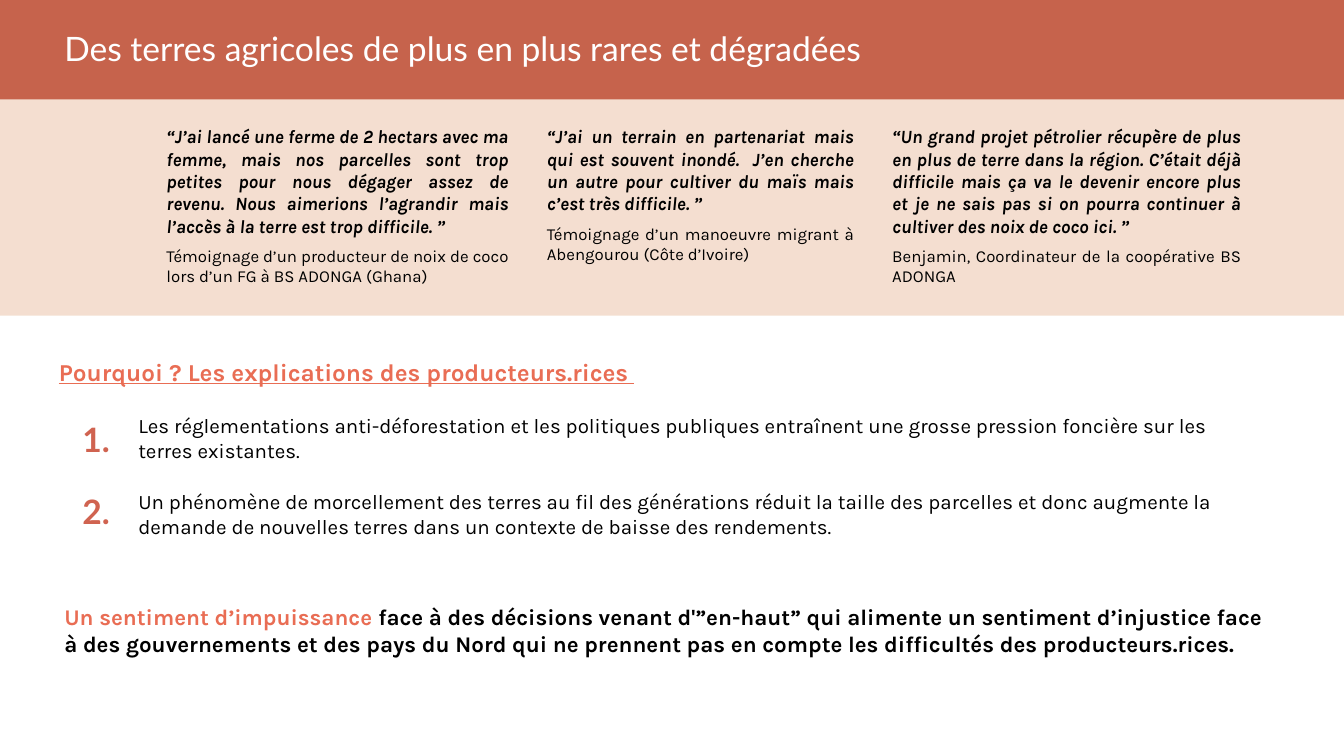
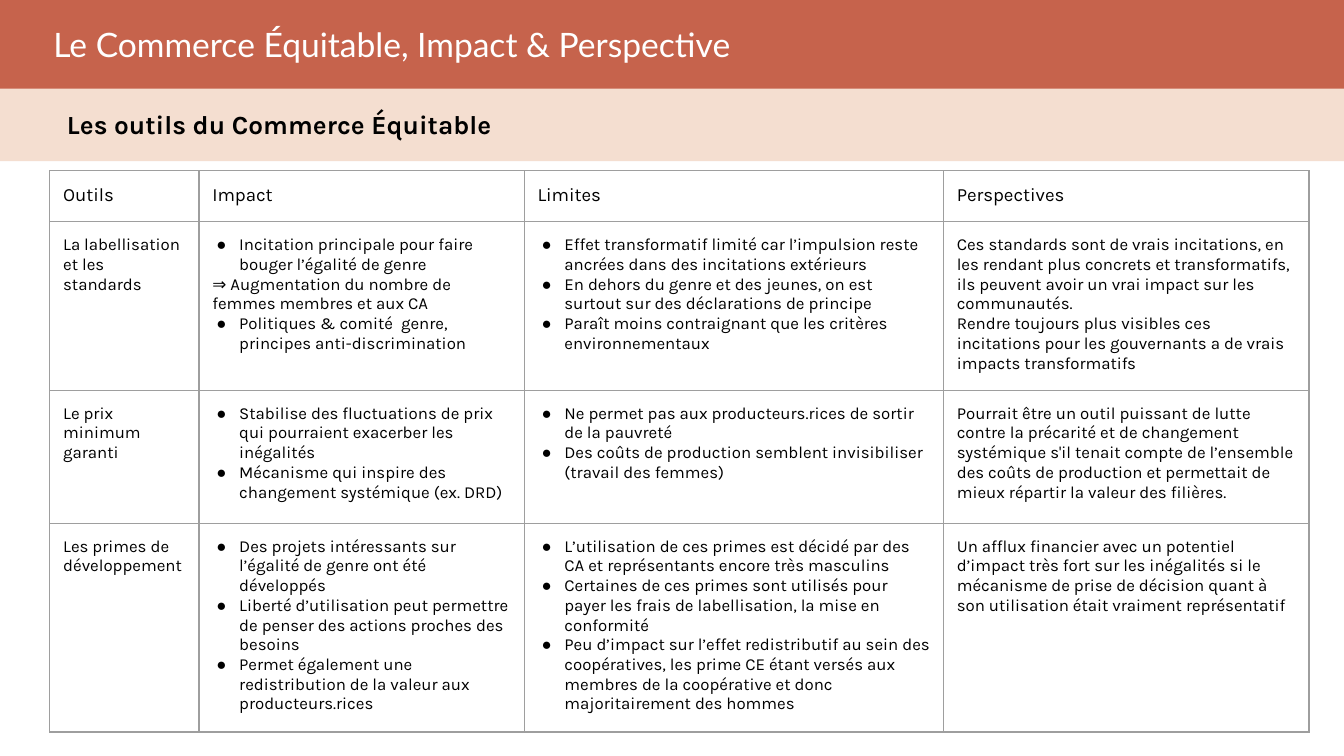
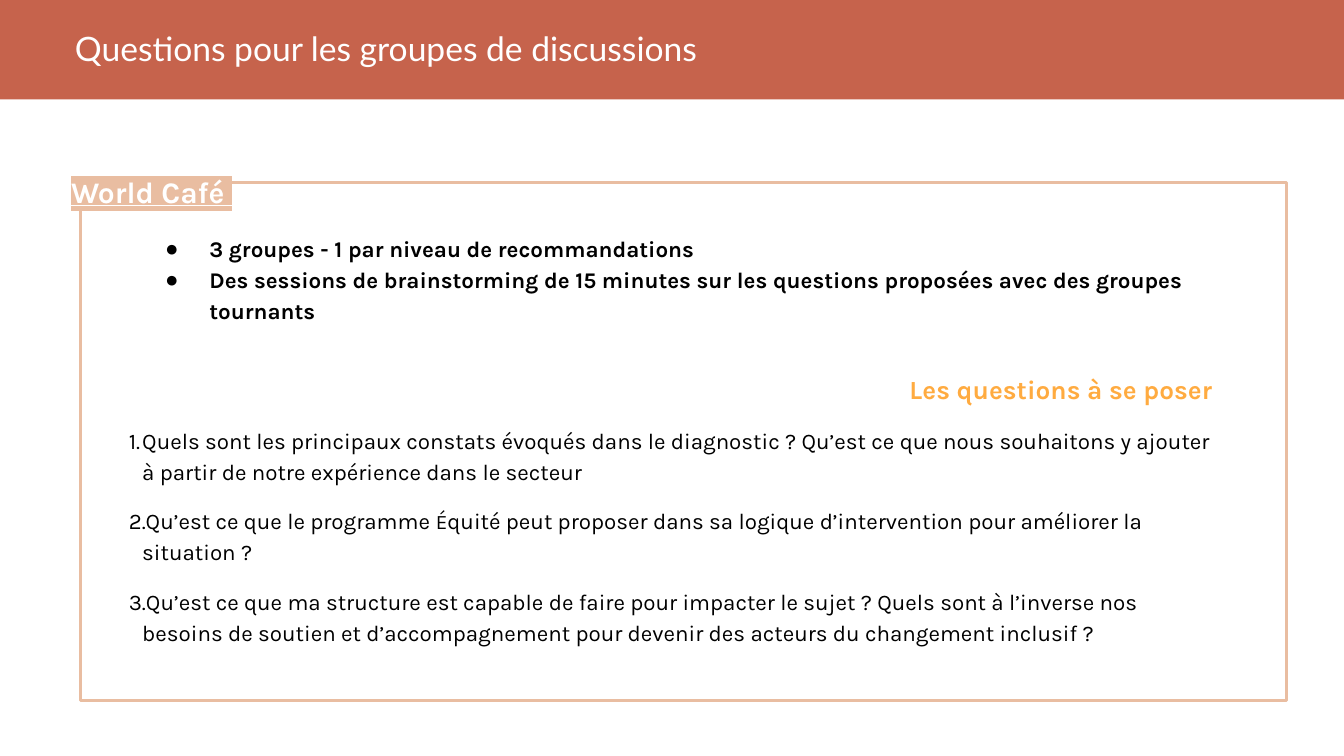
from lxml import etree
from pptx import Presentation
from pptx.dml.color import RGBColor
from pptx.enum import shapes, text
from pptx.oxml import ns
from pptx.util import Inches, Pt

COLORS = {
    "terracotta": "C6634C", "sand": "E9BDA1", "coral": "E96D54", "brick": "D06350",
    "amber": "FFAB40", "border": "9E9E9E", "black": "000000", "white": "FFFFFF",
}
SAND_OPACITY = 49
MARGIN = Inches(0.1)
BAND_TOP = -0.01
JUSTIFY = text.PP_ALIGN.JUSTIFY
RIGHT = text.PP_ALIGN.RIGHT


def style(size, color="black", name="Karla", bold=False, italic=False, underline=False,
          indent=None, bullet=None, highlight=None, **paragraph):
    return {
        "font": {"size": Pt(size), "name": name, "bold": bold, "italic": italic,
                 "underline": underline},
        "color": color, "highlight": highlight, "indent": indent, "bullet": bullet,
        "paragraph": paragraph,
    }


STYLES = {
    "title": style(18, "white", "Lato"),
    "tight title": style(18, "white", "Lato", line_spacing=0.9),
    "subtitle": style(14, bold=True),
    "quote": style(10, bold=True, italic=True, alignment=JUSTIFY),
    "witness": style(9, alignment=JUSTIFY, space_before=Pt(4.7)),
    "why": style(13, "coral", bold=True, underline=True),
    "reason": style(11, indent=(0.59, 0), space_before=Pt(14.2)),
    "number": style(18, "brick", "Lato", bold=True),
    "conclusion": style(12, bold=True),
    "conclusion accent": style(12, "coral", bold=True),
    "column head": style(10),
    "cell": style(9),
    "cell bullet": style(9, indent=(0.2, -0.17), bullet="●"),
    "workshop": style(16, "white", bold=True, underline=True, highlight="sand",
                      alignment=JUSTIFY, line_spacing=1.15),
    "rule": style(12, bold=True, indent=(0.5, -0.33), bullet="●", line_spacing=1.15),
    "ask": style(14, "amber", bold=True, alignment=RIGHT, line_spacing=1.15),
    "question": style(12, indent=(0.1, -0.19), bullet="1.", line_spacing=1.15,
                      space_before=Pt(10)),
    "small letter": style(11),
}

# left, width, height, quote, witness
TESTIMONIES = [
    (1.14, 2.74, 1.41,
     "“J’ai lancé une ferme de 2 hectars avec ma femme, mais nos parcelles sont trop petites "
     "pour nous dégager assez de revenu. Nous aimerions l’agrandir mais l’accès à la terre est "
     "trop difficile. ”",
     "Témoignage d’un producteur de noix de coco lors d’un FG à BS ADONGA (Ghana) "),
    (3.97, 2.48, 1.25,
     "“J’ai un terrain en partenariat mais qui est souvent inondé.  J’en cherche un autre pour "
     "cultiver du maïs mais c’est très difficile. ”",
     "Témoignage d’un manoeuvre migrant à Abengourou (Côte d’Ivoire)"),
    (6.54, 2.79, 1.41,
     "“Un grand projet pétrolier récupère de plus en plus de terre dans la région. C’était déjà "
     "difficile mais ça va le devenir encore plus et je ne sais pas si on pourra continuer à "
     "cultiver des noix de coco ici. ”",
     "Benjamin, Coordinateur de la coopérative BS ADONGA"),
]
REASONS = [
    "Les réglementations anti-déforestation et les politiques publiques entraînent une grosse "
    "pression foncière sur les terres existantes.",
    "Un phénomène de morcellement des terres au fil des générations réduit la taille des "
    "parcelles et donc augmente la demande de nouvelles terres dans un contexte de baisse des "
    "rendements.",
]
CONCLUSION = [
    ("Un sentiment d’impuissance", "conclusion accent"),
    (" face à des décisions venant d'”en-haut” qui alimente un sentiment d’injustice face à des "
     "gouvernements et des pays du Nord qui ne prennent pas en compte les difficultés des "
     "producteurs.rices.", "conclusion"),
]

TOOL_COLUMNS = [("Outils", 1.11), ("Impact", 2.42), ("Limites", 3.12), ("Perspectives", 2.72)]
ROW_HEIGHTS = [0.38, 1.14, 0.99, 1.45]
TABLE_FRAME = 3.28
# A leading "● " marks a bulleted paragraph
TOOLS = [
    (["La labellisation et les standards"],
     ["● Incitation principale pour faire bouger l’égalité de genre",
      "⇒ Augmentation du nombre de femmes membres et aux CA",
      "● Politiques & comité  genre, principes anti-discrimination"],
     ["● Effet transformatif limité car l’impulsion reste ancrées dans des incitations extérieurs",
      "● En dehors du genre et des jeunes, on est surtout sur des déclarations de principe",
      "● Paraît moins contraignant que les critères environnementaux"],
     ["Ces standards sont de vrais incitations, en les rendant plus concrets et transformatifs, "
      "ils peuvent avoir un vrai impact sur les communautés.",
      "Rendre toujours plus visibles ces incitations pour les gouvernants a de vrais impacts "
      "transformatifs"]),
    (["Le prix minimum garanti"],
     ["● Stabilise des fluctuations de prix qui pourraient exacerber les inégalités",
      "● Mécanisme qui inspire des changement systémique (ex. DRD)"],
     ["● Ne permet pas aux producteurs.rices de sortir de la pauvreté",
      "● Des coûts de production semblent invisibiliser (travail des femmes)"],
     ["Pourrait être un outil puissant de lutte contre la précarité et de changement systémique "
      "s'il tenait compte de l’ensemble des coûts de production et permettait de mieux répartir "
      "la valeur des filières."]),
    (["Les primes de développement"],
     ["● Des projets intéressants sur l’égalité de genre ont été développés",
      "● Liberté d’utilisation peut permettre de penser des actions proches des besoins",
      "● Permet également une redistribution de la valeur aux producteurs.rices"],
     ["● L’utilisation de ces primes est décidé par des CA et représentants encore très masculins",
      "● Certaines de ces primes sont utilisés pour payer les frais de labellisation, la mise en "
      "conformité",
      "● Peu d’impact sur l’effet redistributif au sein des coopératives, les prime CE étant "
      "versés aux membres de la coopérative et donc majoritairement des hommes"],
     ["Un afflux financier avec un potentiel d’impact très fort sur les inégalités si le "
      "mécanisme de prise de décision quant à son utilisation était vraiment représentatif"]),
]

WORKSHOP_RULES = [
    "3 groupes - 1 par niveau de recommandations",
    "Des sessions de brainstorming de 15 minutes sur les questions proposées avec des groupes "
    "tournants",
]
QUESTIONS = [
    "Quels sont les principaux constats évoqués dans le diagnostic ? Qu’est ce que nous "
    "souhaitons y ajouter à partir de notre expérience dans le secteur",
    [("Qu’est ce que le programme ", "question"), ("É", "small letter"),
     ("quité peut proposer dans sa logique d’intervention pour améliorer la situation ?",
      "question")],
    "Qu’est ce que ma structure est capable de faire pour impacter le sujet ? Quels sont à "
    "l’inverse nos besoins de soutien et d’accompagnement pour devenir des acteurs du changement "
    "inclusif ?",
]


def rgb(color):
    return RGBColor.from_string(COLORS[color])


def add_element(parent, tag, **attributes):
    return etree.SubElement(parent, ns.qn(tag), attributes)


def add_color(parent, color):
    add_element(parent, "a:srgbClr", val=COLORS[color])


def format_paragraph(paragraph, look):
    properties = paragraph._p.get_or_add_pPr()
    if look["indent"]:
        for key, inches in zip(("marL", "indent"), look["indent"]):
            properties.set(key, str(Inches(inches)))
    if look["bullet"]:
        add_color(add_element(properties, "a:buClr"), "black")
        if look["bullet"] == "1.":
            add_element(properties, "a:buFont", typeface=look["font"]["name"])
            add_element(properties, "a:buAutoNum", type="arabicPeriod")
        else:
            add_element(properties, "a:buFont", typeface="Arial")
            add_element(properties, "a:buChar", char=look["bullet"])
    for key, value in look["paragraph"].items():
        setattr(paragraph, key, value)


def add_run(paragraph, words, look):
    run = paragraph.add_run()
    run.text = words
    run.font.color.rgb = rgb(look["color"])
    for key, value in look["font"].items():
        setattr(run.font, key, value)
    if look["highlight"]:
        highlight = etree.Element(ns.qn("a:highlight"))
        add_color(highlight, look["highlight"])
        run._r.rPr.find(ns.qn("a:solidFill")).addnext(highlight)


def write(frame, paragraphs):
    """Fill a frame from (style name, words) pairs; words may be (words, style name) runs."""
    for index, (style_name, content) in enumerate(paragraphs):
        paragraph = frame.paragraphs[0] if index == 0 else frame.add_paragraph()
        format_paragraph(paragraph, STYLES[style_name])
        runs = [(content, style_name)] if isinstance(content, str) else content
        for words, run_style in runs:
            add_run(paragraph, words, STYLES[run_style])


def set_margins(holder):
    for side in ("left", "top", "right", "bottom"):
        setattr(holder, f"margin_{side}", MARGIN)


def add_text(slide, box, paragraphs):
    frame = slide.shapes.add_textbox(*map(Inches, box)).text_frame
    frame.word_wrap = True
    frame.auto_size = text.MSO_AUTO_SIZE.SHAPE_TO_FIT_TEXT
    set_margins(frame)
    write(frame, paragraphs)


def add_figure(slide, kind, box, fill=None, line=None):
    figure = slide.shapes.add_shape(kind, *map(Inches, box))
    figure.shadow.inherit = False
    if fill:
        figure.fill.solid()
        figure.fill.fore_color.rgb = rgb(fill)
    else:
        figure.fill.background()
    if line:
        figure.line.color.rgb = rgb(line)
        figure.line.width = Pt(1.5)
    else:
        figure.line.fill.background()
    return figure


def add_header(slide, title, title_box, height, sand_height=None, title_style="title"):
    """Draw the title band, with the translucent sand band behind it if asked for."""
    rectangle = shapes.MSO_SHAPE.RECTANGLE
    if sand_height:
        sand = add_figure(slide, rectangle, (0, BAND_TOP, 10, sand_height), "sand")
        color = sand._element.spPr.find(".//" + ns.qn("a:srgbClr"))
        add_element(color, "a:alpha", val=str(SAND_OPACITY * 1000))
    add_figure(slide, rectangle, (0, BAND_TOP, 10, height), "terracotta")
    add_text(slide, title_box, [(title_style, title)])


def add_borders(cell):
    properties = cell._tc.get_or_add_tcPr()
    for position, side in enumerate(("a:lnL", "a:lnR", "a:lnT", "a:lnB")):
        border = etree.Element(ns.qn(side), w=str(Pt(0.75)))
        add_color(add_element(border, "a:solidFill"), "border")
        properties.insert(position, border)


def cell_paragraph(words):
    if words.startswith("● "):
        return "cell bullet", words[2:]
    return "cell", words


def add_tools_table(slide):
    rows = [[[("column head", head)] for head, _ in TOOL_COLUMNS]]
    rows += [[[cell_paragraph(words) for words in cell] for cell in tool] for tool in TOOLS]
    box = (0.37, 1.27, TABLE_FRAME, TABLE_FRAME)
    holder = slide.shapes.add_table(len(rows), len(TOOL_COLUMNS), *map(Inches, box))
    table = holder.table
    table.first_row = table.horz_banding = False
    for column, (_, width) in zip(table.columns, TOOL_COLUMNS):
        column.width = Inches(width)
    for row, height, contents in zip(table.rows, ROW_HEIGHTS, rows):
        row.height = Inches(height)
        for cell, paragraphs in zip(row.cells, contents):
            cell.fill.background()
            set_margins(cell)
            add_borders(cell)
            write(cell.text_frame, paragraphs)
    holder.width = holder.height = Inches(TABLE_FRAME)


def build_lands(slide):
    add_header(slide, "Des terres agricoles de plus en plus rares et dégradées",
               (0.38, 0.11, 6.62, 0.5), 0.75, sand_height=2.36)
    for left, width, height, quote, witness in TESTIMONIES:
        add_text(slide, (left, 0.83, width, height), [("quote", quote), ("witness", witness)])
    add_text(slide, (0.34, 2.56, 9.15, 1.75),
             [("why", "Pourquoi ? Les explications des producteurs.rices ")]
             + [("reason", reason) for reason in REASONS])
    for index in range(len(REASONS)):
        badge = add_figure(slide, shapes.MSO_SHAPE.OVAL,
                           (0.43, 3.08 + 0.54 * index, 0.58, 0.37), "white")
        frame = badge.text_frame
        frame.vertical_anchor = text.MSO_ANCHOR.MIDDLE
        set_margins(frame)
        write(frame, [("number", f"{index + 1}.")])
        frame.paragraphs[0].alignment = text.PP_ALIGN.LEFT
    add_text(slide, (0.38, 4.39, 9.15, 0.61), [("conclusion", CONCLUSION)])


def build_tools(slide):
    add_tools_table(slide)
    add_header(slide, "Le Commerce Équitable, Impact & Perspective",
               (0.3, 0.11, 7.37, 0.47), 0.67, sand_height=1.21, title_style="tight title")
    add_text(slide, (0.4, 0.71, 9.3, 0.44), [("subtitle", "Les outils du Commerce Équitable")])


def build_questions(slide):
    add_figure(slide, shapes.MSO_SHAPE.RECTANGLE, (0.6, 1.36, 8.97, 3.85), line="sand")
    add_header(slide, "Questions pour les groupes de discussions",
               (0.46, 0.11, 8.97, 0.5), 0.75)
    add_text(slide, (0.86, 2.64, 8.31, 2.26),
             [("ask", "Les questions à se poser ")]
             + [("question", question) for question in QUESTIONS])
    add_text(slide, (0.43, 1.15, 1.68, 0.47), [("workshop", "World Café ")])
    add_text(slide, (0.96, 1.62, 8.09, 0.87), [("rule", rule) for rule in WORKSHOP_RULES])


def main():
    deck = Presentation()
    deck.slide_width = Inches(10)
    deck.slide_height = deck.slide_width * 9 // 16
    for build in (build_lands, build_tools, build_questions):
        build(deck.slides.add_slide(deck.slide_layouts[6]))
    deck.save("out.pptx")


if __name__ == "__main__":
    main()
